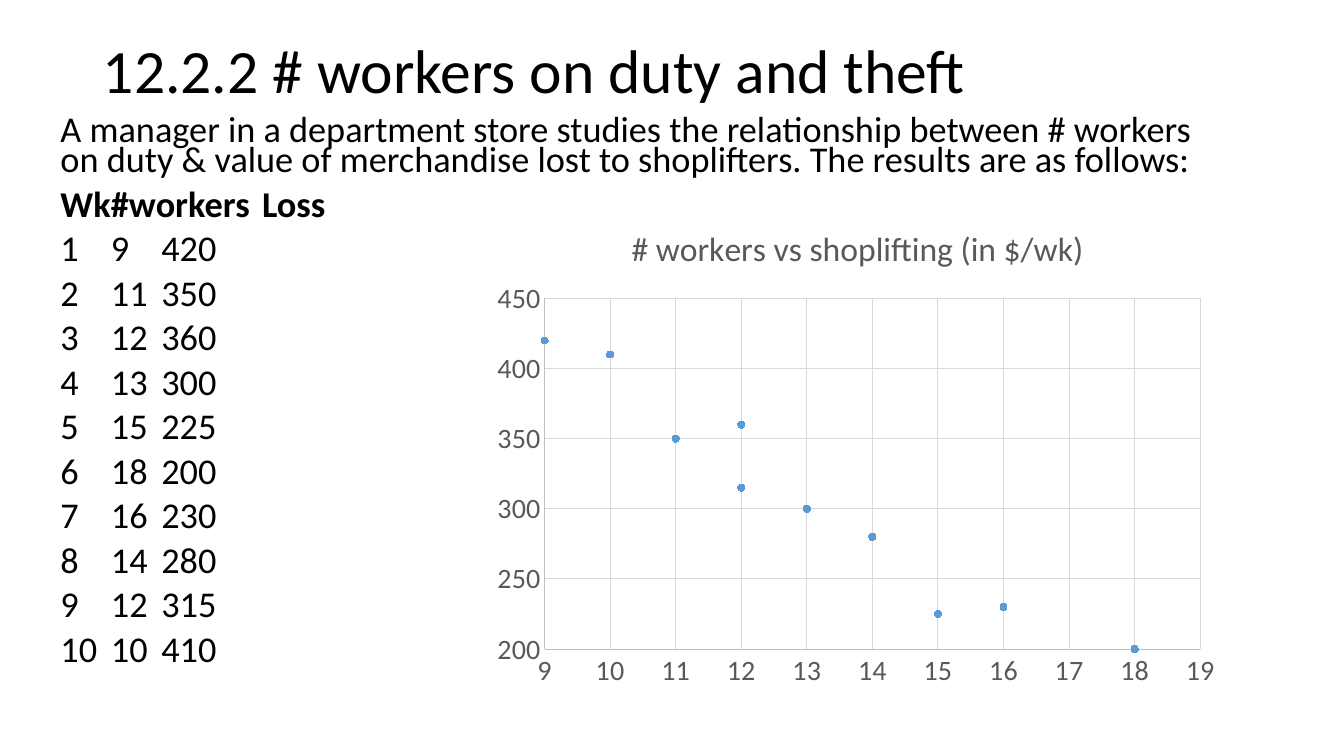
from lxml.etree import SubElement
from pptx import Presentation
from pptx.chart.data import XyChartData
from pptx.dml.color import RGBColor
from pptx.enum.chart import XL_CHART_TYPE, XL_MARKER_STYLE, XL_TICK_MARK
from pptx.enum.text import MSO_ANCHOR, MSO_AUTO_SIZE, PP_ALIGN
from pptx.oxml import parse_xml
from pptx.oxml.ns import nsdecls, qn
from pptx.util import Inches, Pt

TITLE = "12.2.2 # workers on duty and theft"
INTRO = ("A manager in a department store studies the relationship between # workers "
         "on duty & value of merchandise lost to shoplifters. The results are as follows:")
HEADINGS = ("Wk", "#workers", "Loss")
WEEKS = [(9, 420), (11, 350), (12, 360), (13, 300), (15, 225),
         (18, 200), (16, 230), (14, 280), (12, 315), (10, 410)]
CHART_TITLE = "# workers vs shoplifting (in $/wk)"
COLUMN_STOPS = (1, 3)
PLOT_AREA = {"x": 0.08, "y": 0.19, "w": 0.88, "h": 0.71}

FONT = "Calibri"
BLACK = RGBColor(0x00, 0x00, 0x00)
GRAY = RGBColor(0x59, 0x59, 0x59)
AXIS_GRAY = RGBColor(0xBF, 0xBF, 0xBF)
GRID_GRAY = RGBColor(0xD9, 0xD9, 0xD9)
BLUE = RGBColor(0x5B, 0x9B, 0xD5)


def style_font(font, size, color, bold=False):
    font.name = FONT
    font.size = Pt(size)
    font.bold = bold
    font.color.rgb = color


def write(frame, text, size, color=BLACK, bold=False, spacing=None, before=0, stops=()):
    paragraph = frame.paragraphs[0]
    if paragraph.runs:
        paragraph = frame.add_paragraph()
    if stops:
        properties = paragraph._p.get_or_add_pPr()
        properties.set("marL", "0")
        properties.set("indent", "0")
        SubElement(properties, qn("a:buNone"))
        tabs = SubElement(properties, qn("a:tabLst"))
        for stop in stops:
            SubElement(tabs, qn("a:tab"), pos=str(Inches(stop)), algn="l")
    paragraph.alignment = PP_ALIGN.LEFT
    paragraph.space_before = Pt(before)
    if spacing:
        paragraph.line_spacing = spacing
    run = paragraph.add_run()
    run.text = text
    style_font(run.font, size, color, bold)


def place(placeholder, left, top, width, height, anchor):
    placeholder.left, placeholder.top = Inches(left), Inches(top)
    placeholder.width, placeholder.height = Inches(width), Inches(height)
    frame = placeholder.text_frame
    frame.word_wrap = True
    frame.auto_size = MSO_AUTO_SIZE.NONE
    frame.vertical_anchor = anchor
    return frame


def format_axis(axis, low, high, step):
    axis.minimum_scale, axis.maximum_scale, axis.major_unit = low, high, step
    axis.major_tick_mark = axis.minor_tick_mark = XL_TICK_MARK.NONE
    axis.has_major_gridlines = True
    for line, color in ((axis.format.line, AXIS_GRAY),
                        (axis.major_gridlines.format.line, GRID_GRAY)):
        line.color.rgb = color
        line.width = Pt(0.75)
    style_font(axis.tick_labels.font, 20, GRAY)
    axis.tick_labels.number_format = "General"
    axis.tick_labels.number_format_is_linked = False


def add_theft_chart(slide):
    data = XyChartData()
    points = data.add_series("Series 1")
    for workers, loss in WEEKS:
        points.add_data_point(workers, loss)
    chart = slide.shapes.add_chart(XL_CHART_TYPE.XY_SCATTER, Inches(4.81), Inches(2.03),
                                   Inches(7.39), Inches(4.9), data).chart
    style_font(chart.font, 20, BLACK)
    chart.has_legend = False
    chart.has_title = True
    write(chart.chart_title.text_frame, CHART_TITLE, 24, color=GRAY)
    chart.chart_title.include_in_layout = False
    format_axis(chart.category_axis, 9, 19, 1)
    format_axis(chart.value_axis, 200, 450, 50)
    chart.plots[0].vary_by_categories = False

    losses = chart.plots[0].series[0]
    losses.smooth = False
    losses.format.line.fill.background()
    losses.marker.style = XL_MARKER_STYLE.CIRCLE
    losses.marker.size = 5
    losses.marker.format.fill.solid()
    losses.marker.format.fill.fore_color.rgb = BLUE
    losses.marker.format.line.color.rgb = BLUE

    plot_area = chart._chartSpace.chart.plotArea
    for layout in plot_area.findall(qn("c:layout")):
        plot_area.remove(layout)
    settings = {"layoutTarget": "inner", "xMode": "edge", "yMode": "edge", **PLOT_AREA}
    entries = "".join(f'<c:{key} val="{value}"/>' for key, value in settings.items())
    plot_area.insert(0, parse_xml(f"<c:layout {nsdecls('c')}><c:manualLayout>{entries}"
                                  "</c:manualLayout></c:layout>"))


def main():
    presentation = Presentation()
    presentation.slide_width, presentation.slide_height = Inches(13.33), Inches(7.5)
    slide = presentation.slides.add_slide(presentation.slide_layouts[1])

    heading = place(slide.shapes.title, 0.92, 0, 11.5, 1.45, MSO_ANCHOR.MIDDLE)
    write(heading, TITLE, 44, spacing=0.9)

    body = place(slide.placeholders[1], 0.5, 1.12, 11.5, 5.99, MSO_ANCHOR.TOP)
    write(body, INTRO, 25.9, spacing=0.7, stops=COLUMN_STOPS)
    rows = [HEADINGS] + [(week, *record) for week, record in enumerate(WEEKS, 1)]
    for row in rows:
        write(body, "\t".join(map(str, row)), 25.9, bold=row is HEADINGS,
              spacing=0.7, before=10, stops=COLUMN_STOPS)

    add_theft_chart(slide)
    presentation.save("out.pptx")


if __name__ == "__main__":
    main()
